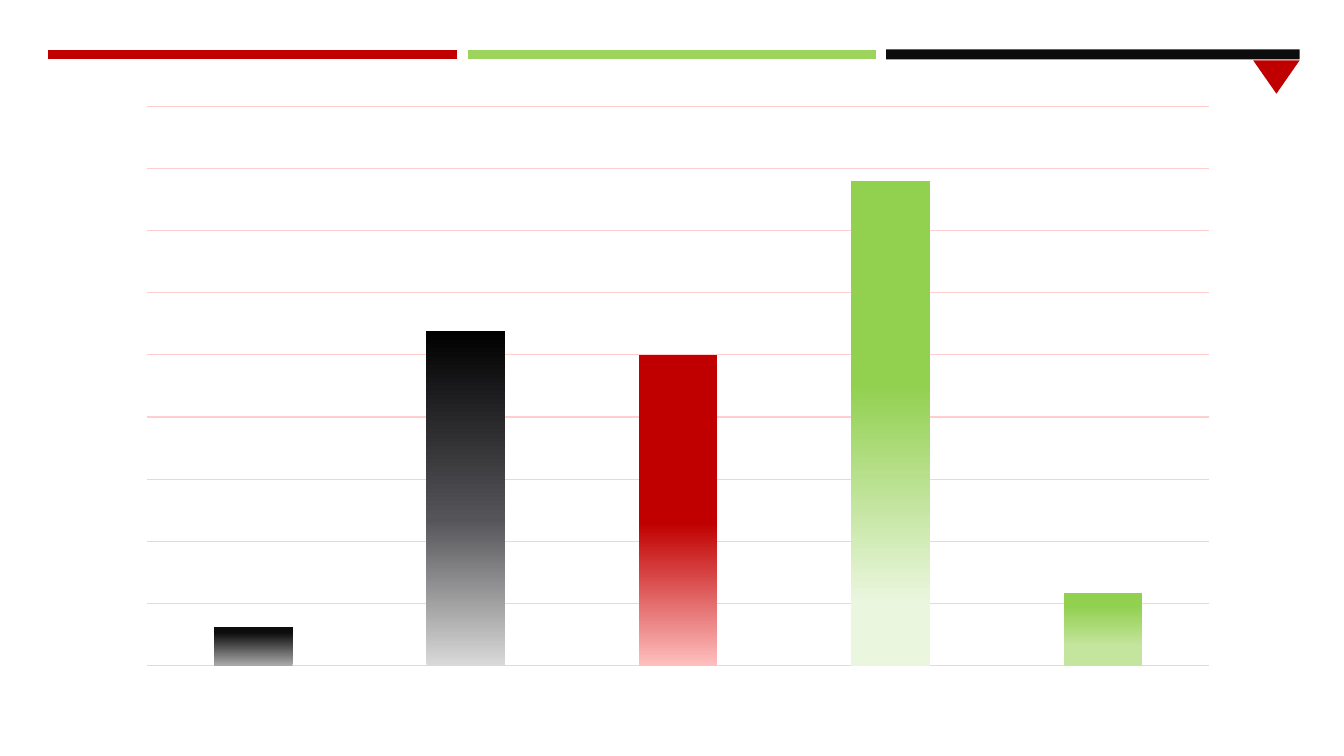
from lxml import etree
from pptx import Presentation
from pptx.chart.data import CategoryChartData
from pptx.dml.color import RGBColor
from pptx.enum.chart import XL_CHART_TYPE
from pptx.enum.shapes import MSO_CONNECTOR, MSO_SHAPE
from pptx.oxml.ns import qn
from pptx.util import Inches, Pt

COLUMN_STACKED = XL_CHART_TYPE.COLUMN_STACKED
STRAIGHT = MSO_CONNECTOR.STRAIGHT
RECTANGLE = MSO_SHAPE.RECTANGLE

BLACK = RGBColor(0x00, 0x00, 0x00)
NEAR_BLACK = RGBColor(0x0D, 0x0D, 0x0D)
SLATE = RGBColor(0x55, 0x54, 0x58)
GREY = RGBColor(0xA6, 0xA6, 0xA6)
LIGHT_GREY = RGBColor(0xD9, 0xD9, 0xD9)
RED = RGBColor(0xC0, 0x00, 0x00)
PINK = RGBColor(0xFF, 0xBF, 0xBF)
GRID_PINK = RGBColor(0xFF, 0xCF, 0xCF)
GREEN = RGBColor(0x92, 0xD0, 0x50)
RULE_GREEN = RGBColor(0x9C, 0xD4, 0x5E)
SOFT_GREEN = RGBColor(0xC4, 0xE5, 0x9E)
PALE_GREEN = RGBColor(0xEB, 0xF6, 0xDF)
MIST = RGBColor(0xF6, 0xF8, 0xFC)
MINT = RGBColor(0xD2, 0xEC, 0xB7)
LIGHT_MINT = RGBColor(0xE1, 0xF2, 0xCF)

FONT = "Cabin"
VALUES = (8, 69, 64, 100, 15)
GRID_STEP = 12.82
GRID_INTERVALS = 9
PLOT_LAYOUT = {"x": 0.048, "y": 0.025, "w": 0.938, "h": 0.909}
SERIES_GRADIENT = ((0, MIST), (74, MINT), (83, MINT), (100, LIGHT_MINT))
COLUMN_GRADIENTS = (
    ((3, GREY), (85, NEAR_BLACK)),
    ((0, LIGHT_GREY), (44, SLATE), (100, BLACK)),
    ((0, PINK), (46, RED)),
    ((13, PALE_GREEN), (58, GREEN), (100, GREEN)),
    ((27, SOFT_GREEN), (82, GREEN)),
)


def add_rule(slide, left, color):
    y = Inches(0.54)
    rule = slide.shapes.add_connector(STRAIGHT, Inches(left), y, Inches(left + 4.05), y)
    rule.line.color.rgb = color
    rule.line.width = Pt(6.5)
    etree.SubElement(rule._element.spPr, qn("a:effectLst"))


def paint_solid(shape, color):
    shape.shadow.inherit = False
    shape.fill.solid()
    shape.fill.fore_color.rgb = color
    shape.line.fill.background()


def add_bar(slide):
    bar = slide.shapes.add_shape(
        RECTANGLE, Inches(8.79), Inches(0.49), Inches(4.1), Inches(0.1)
    )
    paint_solid(bar, NEAR_BLACK)


def add_pointer(slide):
    builder = slide.shapes.build_freeform(Inches(12.43), Inches(0.6))
    corners = ((12.66, 0.93), (12.89, 0.6))
    builder.add_line_segments([(Inches(x), Inches(y)) for x, y in corners], close=True)
    paint_solid(builder.convert_to_shape(), RED)


def paint_gradient(chart_format, stops, angle):
    fill = chart_format.fill
    fill.gradient()
    fill.gradient_angle = angle
    stop_list = fill._xPr.find(qn("a:gradFill")).find(qn("a:gsLst"))
    for stop in list(stop_list):
        stop_list.remove(stop)
    for position, color in stops:
        stop = etree.SubElement(stop_list, qn("a:gs"), pos=str(position * 1000))
        etree.SubElement(stop, qn("a:srgbClr"), val=str(color))
    chart_format.line.fill.background()


def place_plot(chart):
    plot_area = chart._chartSpace.chart.plotArea
    layout = plot_area.find(qn("c:layout"))
    if layout is None:
        layout = etree.Element(qn("c:layout"))
        plot_area.insert(0, layout)
    manual = etree.SubElement(layout, qn("c:manualLayout"))
    settings = {"layoutTarget": "inner", "xMode": "edge", "yMode": "edge", **PLOT_LAYOUT}
    for tag, value in settings.items():
        etree.SubElement(manual, qn(f"c:{tag}"), val=str(value))


def add_column_chart(slide):
    data = CategoryChartData()
    data.categories = [str(number) for number in range(1, len(VALUES) + 1)]
    data.add_series("Series 1", VALUES)
    chart = slide.shapes.add_chart(
        COLUMN_STACKED, Inches(0.92), Inches(0.9), Inches(11.23), Inches(6.11), data
    ).chart
    chart.has_legend = False
    chart.has_title = False
    chart.font.name = FONT
    chart.font.size = Pt(14)
    chart.font.color.rgb = BLACK
    place_plot(chart)

    chart.category_axis.visible = False
    value_axis = chart.value_axis
    value_axis.visible = False
    value_axis.minimum_scale = 0
    value_axis.maximum_scale = GRID_STEP * GRID_INTERVALS
    value_axis.major_unit = GRID_STEP
    value_axis.has_major_gridlines = True
    grid_line = value_axis.major_gridlines.format.line
    grid_line.color.rgb = GRID_PINK
    grid_line.width = Pt(0.75)

    plot = chart.plots[0]
    plot.vary_by_categories = False
    plot.gap_width = 170
    plot.overlap = 100
    series = plot.series[0]
    paint_gradient(series.format, SERIES_GRADIENT, 270)
    for index, stops in enumerate(COLUMN_GRADIENTS):
        paint_gradient(series.points[index].format, stops, 90)


def main():
    presentation = Presentation()
    presentation.slide_width = Inches(13.33)
    presentation.slide_height = Inches(7.5)
    slide = presentation.slides.add_slide(presentation.slide_layouts[6])
    add_rule(slide, 0.48, RED)
    add_rule(slide, 4.64, RULE_GREEN)
    add_bar(slide)
    add_pointer(slide)
    add_column_chart(slide)
    presentation.save("out.pptx")


if __name__ == "__main__":
    main()
